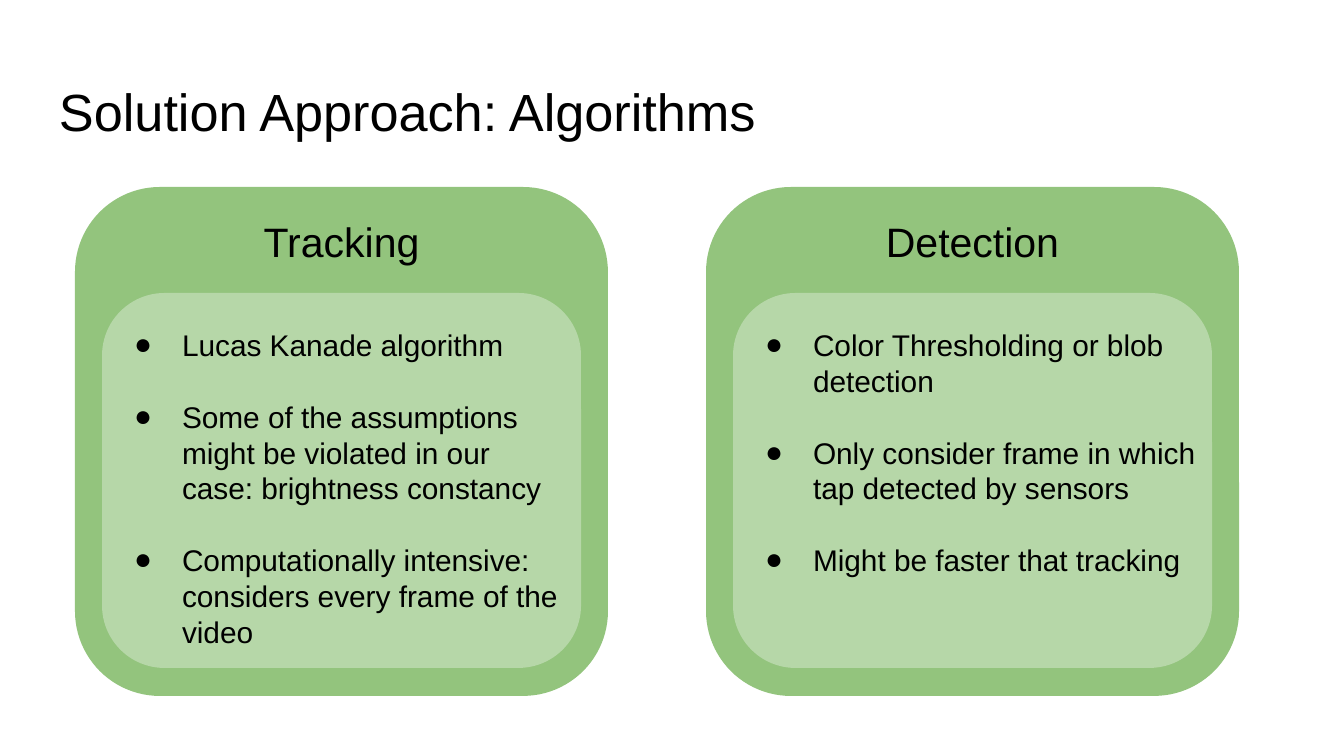
import pptx
import pptx.util
import pptx.dml.color
import pptx.enum.shapes
import pptx.enum.text
import lxml.etree

# Content
TITLE = "Solution Approach: Algorithms"
APPROACHES = [
    ("Tracking", [
        "Lucas Kanade algorithm",
        "Some of the assumptions might be violated in our case: brightness constancy",
        "Computationally intensive: considers every frame of the video",
    ]),
    ("Detection", [
        "Color Thresholding or blob detection",
        "Only consider frame in which tap detected by sensors",
        "Might be faster that tracking",
    ]),
]
FONT, BLACK, CARD_GREEN, PANEL_GREEN = "Arial", "000000", "93C47D", "B6D7A8"

# Layout in px
PX = 914400 / 134.4
SLIDE_W, SLIDE_H = 1344, 756
CARD_LEFT, CARD_TOP, CARD_W, CARD_H = 75, 187, 533, 509
CARD_STEP = 631
PANEL_INSET, PANEL_TOP, PANEL_W, PANEL_H = 27, 293, 479, 375
TEXT_TOP, TEXT_H = 203, 453
INSET = 13
BULLET_INDENT, BULLET_HANG = 67, 48
HEADING_GAP, BULLET_GAP = 33, 19.2  # points


def emu(px):
    return pptx.util.Emu(round(px * PX))


def color(hex_value):
    return pptx.dml.color.RGBColor.from_string(hex_value)


def add_card(shapes, left, top, width, height, fill):
    card = shapes.add_shape(pptx.enum.shapes.MSO_SHAPE.ROUNDED_RECTANGLE,
                            emu(left), emu(top), emu(width), emu(height))
    card.shadow.inherit = False
    card.fill.solid()
    card.fill.fore_color.rgb = color(fill)
    card.line.fill.background()


def add_text(shapes, left, top, width, height):
    frame = shapes.add_textbox(emu(left), emu(top), emu(width), emu(height)).text_frame
    frame.word_wrap = True
    frame.margin_left = frame.margin_right = emu(INSET)
    frame.margin_top = frame.margin_bottom = emu(INSET)
    return frame


def write(paragraph, text, size):
    paragraph.text = text
    for run in paragraph.runs:
        run.font.name = FONT
        run.font.size = pptx.util.Pt(size)
        run.font.color.rgb = color(BLACK)


def add_bullet(paragraph):
    properties = paragraph._p.get_or_add_pPr()
    properties.set("marL", str(emu(BULLET_INDENT)))
    properties.set("indent", str(-emu(BULLET_HANG)))
    for tag, name, value in (("buFont", "typeface", FONT), ("buChar", "char", "●")):
        mark = lxml.etree.SubElement(properties, pptx.oxml.ns.qn("a:" + tag))
        mark.set(name, value)


deck = pptx.Presentation()
deck.slide_width, deck.slide_height = emu(SLIDE_W), emu(SLIDE_H)
slide = deck.slides.add_slide(deck.slide_layouts[6])

# Title
title = add_text(slide.shapes, 46, 66, 1252, 85)
title.vertical_anchor = pptx.enum.text.MSO_ANCHOR.TOP
write(title.paragraphs[0], TITLE, 28)

# One grouped card per approach
for column, (heading, points) in enumerate(APPROACHES):
    left = CARD_LEFT + column * CARD_STEP
    panel_left = left + PANEL_INSET
    group = slide.shapes.add_group_shape()
    add_card(group.shapes, left, CARD_TOP, CARD_W, CARD_H, CARD_GREEN)
    add_card(group.shapes, panel_left, PANEL_TOP, PANEL_W, PANEL_H, PANEL_GREEN)

    body = add_text(group.shapes, panel_left, TEXT_TOP, PANEL_W, TEXT_H)
    write(body.paragraphs[0], heading, 22)
    body.paragraphs[0].alignment = pptx.enum.text.PP_ALIGN.CENTER
    for index, point in enumerate(points):
        bullet = body.add_paragraph()
        write(bullet, point, 16)
        bullet.space_before = pptx.util.Pt(BULLET_GAP if index else HEADING_GAP)
        add_bullet(bullet)

deck.save("out.pptx")
